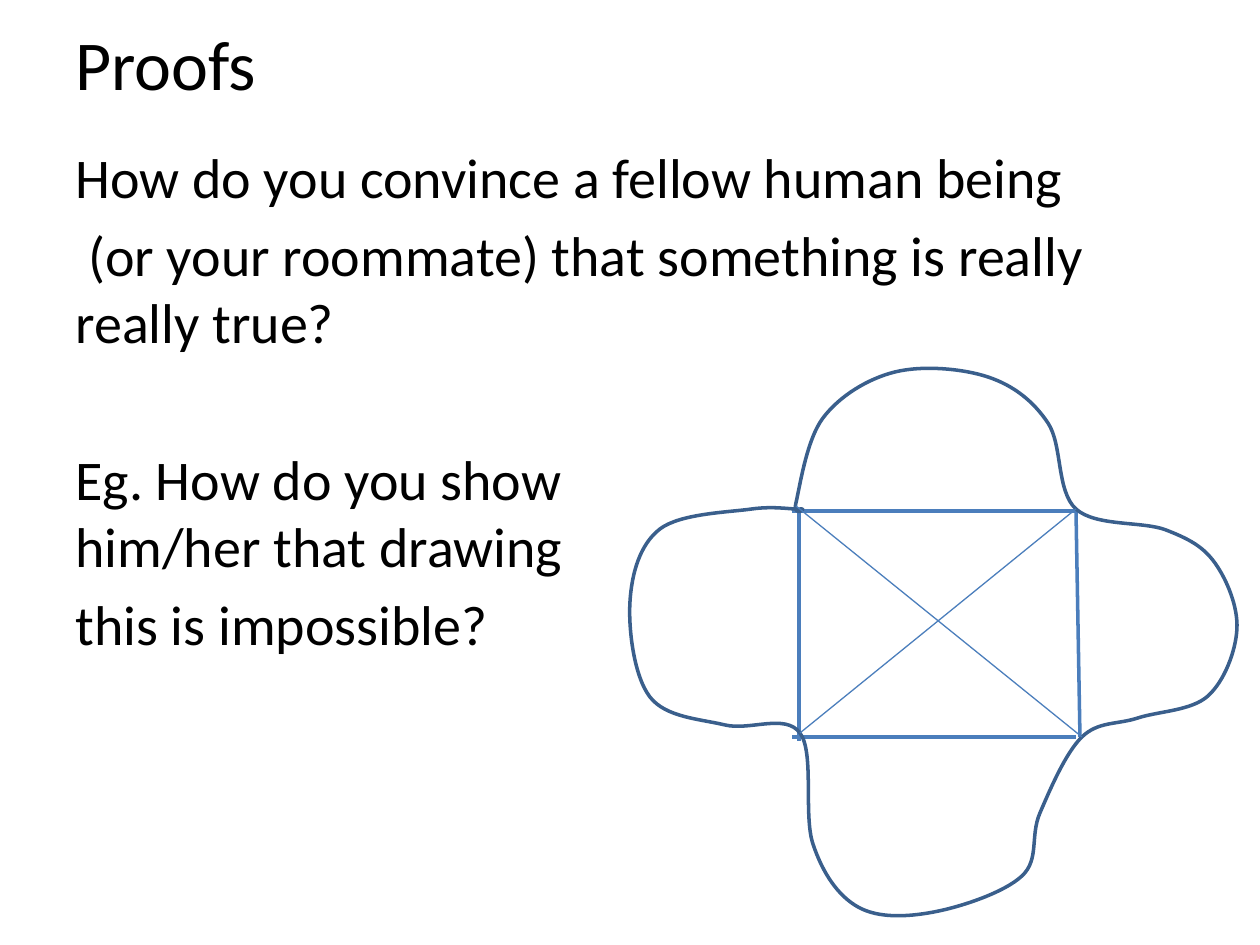
from lxml.etree import SubElement
from pptx import Presentation
from pptx.dml.color import RGBColor
from pptx.enum.shapes import MSO_CONNECTOR as Link
from pptx.enum.text import MSO_ANCHOR as Anchor
from pptx.oxml.ns import qn
from pptx.util import Emu, Pt

PX = 914400 // 126
INK = {"text": "000000", "line": "4B7EBC", "loop": "3A5F8C"}

# Points that the closed loop passes through, clockwise from top left
LOOP = [
    (796, 503), (823, 418), (895, 372), (988, 377), (1048, 423), (1076, 509),
    (1166, 530), (1215, 563), (1237, 629), (1208, 696), (1138, 718), (1082, 737),
    (1040, 813), (1022, 876), (934, 912), (858, 907), (813, 844), (800, 733),
    (725, 725), (650, 697), (630, 602), (660, 529), (752, 509), (801, 509),
]
SIDES = [
    (799, 509, 799, 741), (1076, 737, 792, 737),
    (792, 511, 1076, 511), (1080, 737, 1076, 509),
]
CROSS = [(796, 506, 1082, 737), (800, 733, 1076, 509)]


def px(n):
    return Emu(round(n * PX))


def color(name):
    return RGBColor.from_string(INK[name])


def add_box(slide, x, y, w, h, anchor=Anchor.TOP):
    frame = slide.shapes.add_textbox(px(x), px(y), px(w), px(h)).text_frame
    frame.word_wrap = True
    frame.vertical_anchor = anchor
    return frame


def add_text(frame, text, size=32, before=0, indent=0):
    """Fill the first paragraph if it is empty, else add one."""
    para = frame.paragraphs[0]
    if para.text:
        para = frame.add_paragraph()
    para.text = text
    para.space_before = Pt(before)
    if indent:
        para._p.get_or_add_pPr().set("indent", str(px(indent)))
    for run in para.runs:
        run.font.name = "Calibri"
        run.font.size = Pt(size)
        run.font.color.rgb = color("text")


def add_line(slide, ends, width):
    line = slide.shapes.add_connector(Link.STRAIGHT, *map(px, ends))
    line.line.color.rgb = color("line")
    line.line.width = Pt(width)
    SubElement(line._element.spPr, qn("a:effectLst"))


def curve_points(nodes):
    """Give two controls and an end for each span of a closed smooth curve."""
    points = []
    for i in range(len(nodes)):
        a, b, c, d = (nodes[(i + k) % len(nodes)] for k in (-1, 0, 1, 2))
        points.append(tuple(q + (r - p) / 6 for p, q, r in zip(a, b, c)))
        points.append(tuple(r - (s - q) / 6 for q, r, s in zip(b, c, d)))
        points.append(c)
    return points


def add_loop(slide, nodes, width):
    start = [px(n) for n in nodes[0]]
    maker = slide.shapes.build_freeform(*start)
    maker.add_line_segments(
        [(px(x), px(y)) for x, y in curve_points(nodes)], close=True)
    loop = maker.convert_to_shape()
    # Turn each three straight segments into one cubic curve
    steps = list(loop._element.iter(qn("a:lnTo")))
    for i in range(0, len(steps), 3):
        route = steps[i].getparent()
        cubic = SubElement(route, qn("a:cubicBezTo"))
        route.replace(steps[i], cubic)
        for step in steps[i:i + 3]:
            cubic.append(step[0])
        for step in steps[i + 1:i + 3]:
            route.remove(step)
    loop.shadow.inherit = False
    loop.fill.background()
    loop.line.color.rgb = color("loop")
    loop.line.width = Pt(width)


def main():
    deck = Presentation()
    deck.slide_width, deck.slide_height = px(1260), px(945)
    slide = deck.slides.add_slide(deck.slide_layouts[6])

    title = add_box(slide, 63, 0, 1134, 126, Anchor.MIDDLE)
    add_text(title, "Proofs", size=40)

    body = add_box(slide, 63, 136, 1134, 708)
    add_text(body, "How do you convince a fellow human being")
    add_text(body, "(or your roommate) that something is really really true?",
             before=6.4, indent=13)
    add_text(body, "Eg. How do you show\vhim/her that drawing", before=51)
    add_text(body, "this is impossible?", before=6.4)

    for ends in SIDES:
        add_line(slide, ends, 2)
    add_loop(slide, LOOP, 2)
    for ends in CROSS:
        add_line(slide, ends, 0.75)

    deck.save("out.pptx")


if __name__ == "__main__":
    main()
